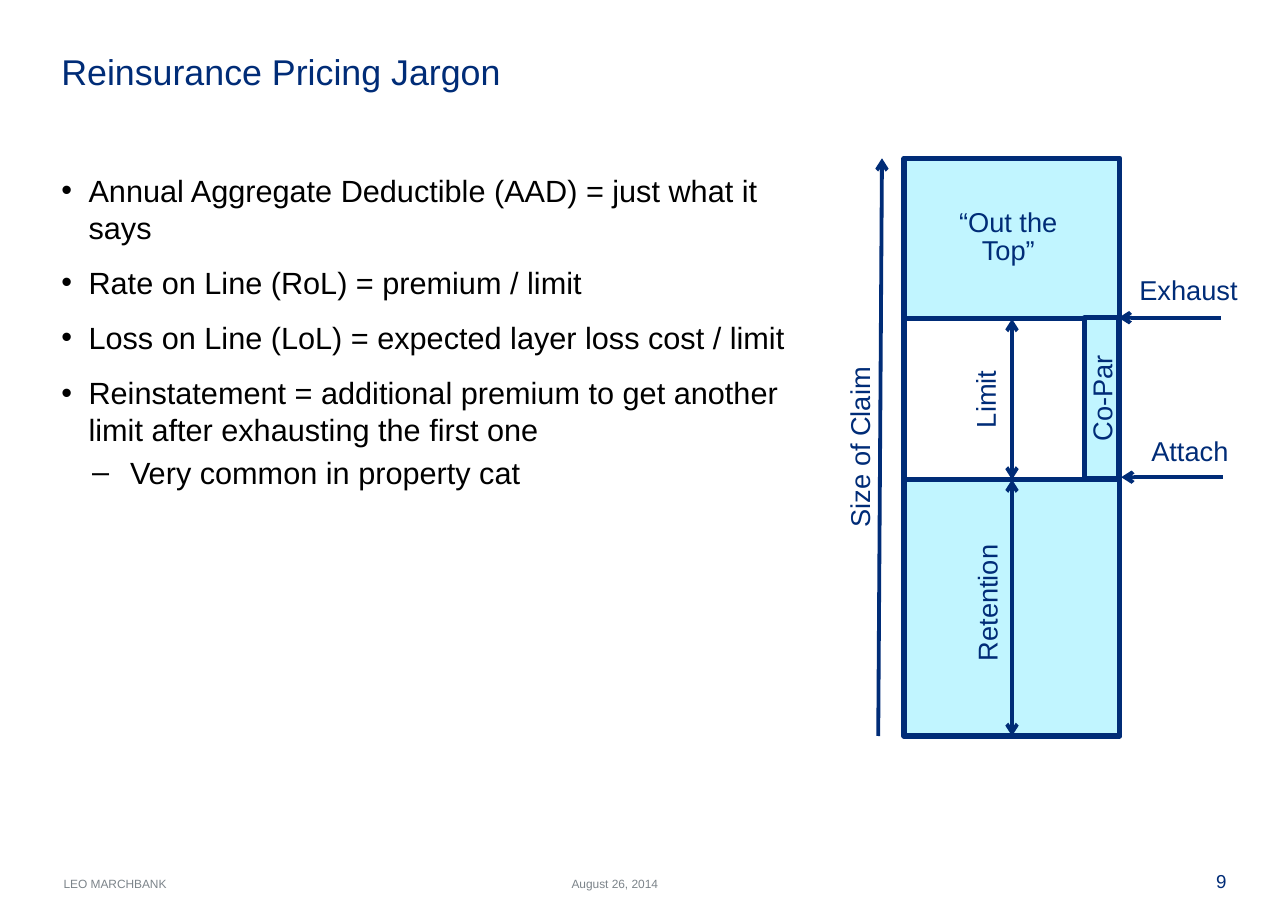
from pptx import Presentation
from pptx.dml.color import RGBColor
from pptx.enum import shapes, text
from pptx.oxml import xmlchemy as xml
from pptx.util import Pt
from lxml import etree

NAVY = RGBColor(0x00, 0x2C, 0x77)
CYAN = RGBColor(0xC1, 0xF5, 0xFF)
GRAY = RGBColor(0x7C, 0x84, 0x8A)
BLACK = RGBColor(0, 0, 0)
FONT = "Arial"
LEFT, MID, RIGHT = text.PP_ALIGN.LEFT, text.PP_ALIGN.CENTER, text.PP_ALIGN.RIGHT
TOP, BASE = text.MSO_ANCHOR.TOP, text.MSO_ANCHOR.BOTTOM

STACK_X, STACK_W = 530.6, 126.8
AXIS = STACK_X + STACK_W / 2
CEDED, ATTACH, FLOOR = 187.2, 281.5, 432
CEIL = 2 * CEDED - ATTACH

BULLETS = [
    ("Annual Aggregate Deductible (AAD) = just what it says", 0),
    ("Rate on Line (RoL) = premium / limit", 0),
    ("Loss on Line (LoL) = expected layer loss cost / limit", 0),
    ("Reinstatement = additional premium to get another limit "
     "after exhausting the first one", 0),
    ("Very common in property cat", 1),
]
# mark, left margin, first-line indent, space before
LEVELS = [("•", 16, -16, 10.8), ("–", 40.3, -22.3, 3.6)]

LABELS = [
    ("Size of Claim", 403.2, 250.6, 205.2, 23.8, 270),
    ("Limit", 542.2, 222.5, 74.9, 23.8, 270),
    ("Retention", 538.6, 342, 84.2, 23.8, 270),
    ("“Out the Top”", 554.4, 119.5, 74.9, 40.3, 0),
    ("Co-Par", 610.6, 221.8, 74.9, 23.8, 270),
    ("Exhaust", 660.2, 159.8, 74.9, 23.8, 0),
    ("Attach", 661, 254.2, 74.9, 23.8, 0),
]


def add_run(para, words, size, color):
    run = para.add_run()
    run.text = words
    run.font.name, run.font.size = FONT, Pt(size)
    run.font.color.rgb = color


def add_box(slide, x, y, w, h, pads=(0, 0, 0, 0), anchor=TOP):
    box = slide.shapes.add_textbox(Pt(x), Pt(y), Pt(w), Pt(h))
    frame = box.text_frame
    frame.word_wrap = True
    frame.vertical_anchor = anchor
    (frame.margin_left, frame.margin_top,
     frame.margin_right, frame.margin_bottom) = map(Pt, pads)
    return box


def add_line(slide, words, size, color, box, align=LEFT, lead=1.0):
    """Fill the box with one paragraph of a single run."""
    para = box.text_frame.paragraphs[0]
    para.alignment, para.line_spacing = align, lead
    add_run(para, words, size, color)


def add_label(slide, words, x, y, w, h, turn):
    box = add_box(slide, x, y, w, h, (7.2, 3.6, 7.2, 3.6))
    box.rotation = turn
    add_line(slide, words, 16, NAVY, box, MID, 0.86)


def add_list(slide):
    frame = add_box(slide, 36, 100.8, 431.3, 392.4).text_frame
    for i, (words, level) in enumerate(BULLETS):
        para = frame.add_paragraph() if i else frame.paragraphs[0]
        mark, margin, indent, gap = LEVELS[level]
        para.level = level
        para.space_before = Pt(gap if i else 0)
        props = para._p.get_or_add_pPr()
        props.set("marL", str(Pt(margin)))
        props.set("indent", str(Pt(indent)))
        etree.SubElement(props, xml.qn("a:buFont")).set("typeface", FONT)
        etree.SubElement(props, xml.qn("a:buChar")).set("char", mark)
        add_run(para, words, 18, BLACK)


def add_layer(slide, x, y, w, h, fill=None):
    rect = slide.shapes.add_shape(
        shapes.MSO_SHAPE.RECTANGLE, Pt(x), Pt(y), Pt(w), Pt(h))
    rect.shadow.inherit = False
    if fill is None:
        rect.fill.background()
    else:
        rect.fill.solid()
        rect.fill.fore_color.rgb = fill
    rect.line.color.rgb, rect.line.width = NAVY, Pt(3)
    return rect


def add_arrow(slide, x1, y1, x2, y2, both=False):
    link = slide.shapes.add_connector(
        shapes.MSO_CONNECTOR.STRAIGHT, Pt(x1), Pt(y1), Pt(x2), Pt(y2))
    link.line.color.rgb, link.line.width = NAVY, Pt(2.25)
    line = link.line._get_or_add_ln()
    for end in ("a:headEnd", "a:tailEnd") if both else ("a:tailEnd",):
        etree.SubElement(line, xml.qn(end)).set("type", "arrow")
    etree.SubElement(link._element.spPr, xml.qn("a:effectLst"))
    return link


def add_span(slide, over, under, y1, y2, side1, side2):
    """Draw a double arrow on the axis, joined to two layer sides."""
    link = add_arrow(slide, AXIS, y1, AXIS, y2, True)
    link.begin_connect(over, side1)
    link.end_connect(under, side2)


def add_tower(slide):
    kept = add_layer(slide, STACK_X, ATTACH, STACK_W, FLOOR - ATTACH, CYAN)
    limit = add_layer(slide, STACK_X, CEDED, STACK_W, ATTACH - CEDED)
    add_layer(slide, STACK_X, CEIL, STACK_W, CEDED - CEIL, CYAN)
    add_layer(slide, 636.5, 186.5, 20.2, ATTACH - CEDED, CYAN)
    add_arrow(slide, 515.5, FLOOR, 517.7, CEIL)
    add_span(slide, limit, limit, CEDED, ATTACH, 0, 2)
    add_span(slide, kept, kept, ATTACH, FLOOR, 0, 2)
    add_arrow(slide, 716.4, 186.5, 656.6, 186.5)
    add_arrow(slide, 717.8, 280.1, 658.1, 280.1)
    for label in LABELS:
        add_label(slide, *label)


def main():
    deck = Presentation()
    deck.slide_width, deck.slide_height = Pt(756), Pt(540)
    slide = deck.slides.add_slide(deck.slide_layouts[6])
    title = add_box(slide, 36, 30.2, 684, 54.7, (0, 3.6, 7.2, 3.6))
    add_line(slide, "Reinsurance Pricing Jargon", 21, NAVY, title, lead=0.83)
    add_list(slide)
    add_tower(slide)
    firm = add_box(slide, 37.4, 514.8, 227.5, 7.9, anchor=BASE)
    add_line(slide, "LEO MARCHBANK", 7, GRAY, firm)
    date = add_box(slide, 335.5, 514.1, 85, 8.6, anchor=BASE)
    add_line(slide, "August 26, 2014", 7, GRAY, date)
    page = add_box(slide, 684.7, 510.5, 35.3, 13)
    add_line(slide, "9", 11, NAVY, page, RIGHT)
    deck.save("out.pptx")


if __name__ == "__main__":
    main()
